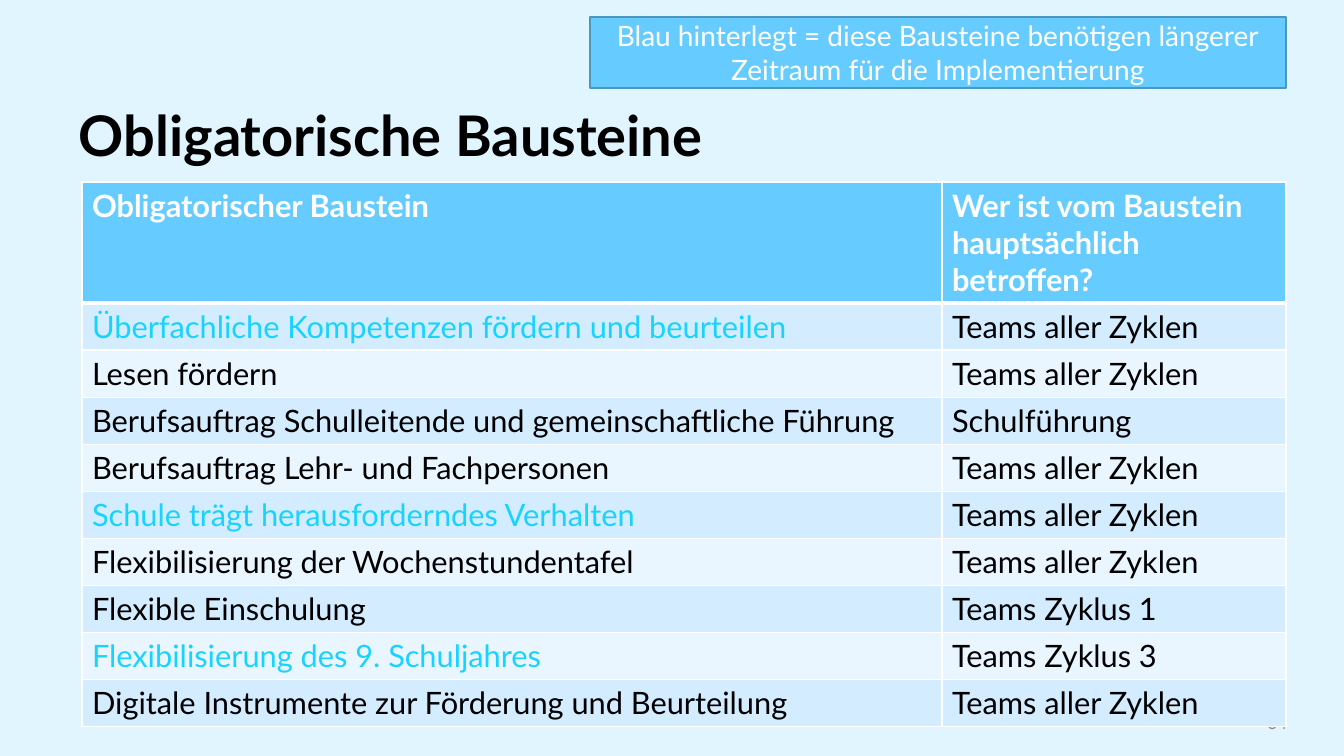
from lxml.etree import SubElement
from pptx import Presentation
from pptx.dml.color import RGBColor
from pptx.enum.shapes import MSO_SHAPE
from pptx.enum.text import MSO_ANCHOR as ANCHOR, PP_ALIGN as ALIGN
from pptx.oxml import parse_xml
from pptx.oxml.ns import nsdecls, qn
from pptx.util import Emu, Pt

WIDTH, HEIGHT = 1344, 756
SCALE = 12192000 / WIDTH

BACKGROUND = RGBColor(0xE0, 0xF5, 0xFF)
BLUE = RGBColor(0x66, 0xCC, 0xFF)
BLUE_EDGE = RGBColor(0x4B, 0x97, 0xBD)
CYAN = RGBColor(0x19, 0xD3, 0xFF)
BANDS = RGBColor(0xD3, 0xEC, 0xFF), RGBColor(0xEA, 0xF6, 0xFF)
WHITE = RGBColor(0xFF, 0xFF, 0xFF)
BLACK = RGBColor(0, 0, 0)
GRAY = RGBColor(0x8C, 0x8C, 0x8C)

ALL_CYCLES = "Teams aller Zyklen"
HEADER = "Obligatorischer Baustein", "Wer ist vom Baustein hauptsächlich betroffen?"
# Module, teams concerned, needs a longer period
MODULES = [
    ("Überfachliche Kompetenzen fördern und beurteilen", ALL_CYCLES, True),
    ("Lesen fördern", ALL_CYCLES, False),
    ("Berufsauftrag Schulleitende und gemeinschaftliche Führung", "Schulführung", False),
    ("Berufsauftrag Lehr- und Fachpersonen", ALL_CYCLES, False),
    ("Schule trägt herausforderndes Verhalten", ALL_CYCLES, True),
    ("Flexibilisierung der Wochenstundentafel", ALL_CYCLES, False),
    ("Flexible Einschulung", "Teams Zyklus 1", False),
    ("Flexibilisierung des 9. Schuljahres", "Teams Zyklus 3", True),
    ("Digitale Instrumente zur Förderung und Beurteilung", ALL_CYCLES, False),
]


def px(n):
    return Emu(round(n * SCALE))


class SlideBuilder:
    font = "Lato"

    def __init__(self, prs):
        self.s = prs.slides.add_slide(prs.slide_layouts[6])
        self.s.background.fill.solid()
        self.s.background.fill.fore_color.rgb = BACKGROUND

    def set_text(self, tf, lines, size, color, bold=False, align=ALIGN.LEFT, spacing=None):
        tf.word_wrap = True
        for i, line in enumerate(lines):
            p = tf.add_paragraph() if i else tf.paragraphs[0]
            p.text = line
            p.alignment = align
            p.line_spacing = spacing
            p.font.name = self.font
            p.font.size = Pt(size)
            p.font.bold = bold
            p.font.color.rgb = color

    def text(self, box, line, size, color, anchor=ANCHOR.TOP, **style):
        tf = self.s.shapes.add_textbox(*map(px, box)).text_frame
        tf.vertical_anchor = anchor
        self.set_text(tf, [line], size, color, **style)

    def banner(self, box, lines, size):
        sp = self.s.shapes.add_shape(MSO_SHAPE.RECTANGLE, *map(px, box))
        sp.shadow.inherit = False
        sp.fill.solid()
        sp.fill.fore_color.rgb = BLUE
        sp.line.color.rgb = BLUE_EDGE
        sp.line.width = Pt(1)
        sp.text_frame.vertical_anchor = ANCHOR.MIDDLE
        self.set_text(sp.text_frame, lines, size, WHITE, align=ALIGN.CENTER)

    def cell(self, cell, line, fill, color, bold=False, top=1, bottom=1):
        self.set_text(cell.text_frame, [line], 22, color, bold)
        tc_pr = cell._tc.get_or_add_tcPr()
        for side, width in zip("LRTB", (1, 1, top, bottom)):
            ln = parse_xml(f'<a:ln{side} {nsdecls("a")} w="{Pt(width)}"/>')
            solid = SubElement(ln, qn("a:solidFill"))
            SubElement(solid, qn("a:srgbClr"), val=str(WHITE))
            tc_pr.append(ln)
        cell.fill.solid()
        cell.fill.fore_color.rgb = fill

    def module_table(self, left, top, col_widths, header_height, row_height):
        rows = len(MODULES) + 1
        height = header_height + row_height * len(MODULES)
        box = left, top, sum(col_widths), height
        table = self.s.shapes.add_table(rows, len(HEADER), *map(px, box)).table
        for col, width in zip(table.columns, col_widths):
            col.width = px(width)
        for i, row in enumerate(table.rows):
            row.height = px(row_height if i else header_height)
        for c, label in enumerate(HEADER):
            self.cell(table.cell(0, c), label, BLUE, WHITE, bold=True, bottom=3)
        for r, (module, teams, long_term) in enumerate(MODULES, 1):
            band = BANDS[(r - 1) % 2]
            top_line = 3 if r == 1 else 1
            self.cell(table.cell(r, 0), module, band, CYAN if long_term else BLACK, top=top_line)
            self.cell(table.cell(r, 1), teams, band, BLACK, top=top_line)


def main():
    prs = Presentation()
    prs.slide_width, prs.slide_height = px(WIDTH), px(HEIGHT)
    slide = SlideBuilder(prs)

    # Slide number
    slide.text((1139, 703, 158, 39), "34", 12, GRAY, ANCHOR.MIDDLE, align=ALIGN.RIGHT)

    # Title
    slide.text((69, 103, 1230, 80), "Obligatorische Bausteine", 40, BLACK, bold=True, spacing=0.9)

    # Modules and the teams concerned
    slide.module_table(82, 182, (860, 344), 121, 47)

    # Colour key
    slide.banner((590, 17, 696, 71), [
        "Blau hinterlegt = diese Bausteine benötigen längerer",
        "Zeitraum für die Implementierung",
    ], 20)

    prs.save("out.pptx")


if __name__ == "__main__":
    main()
